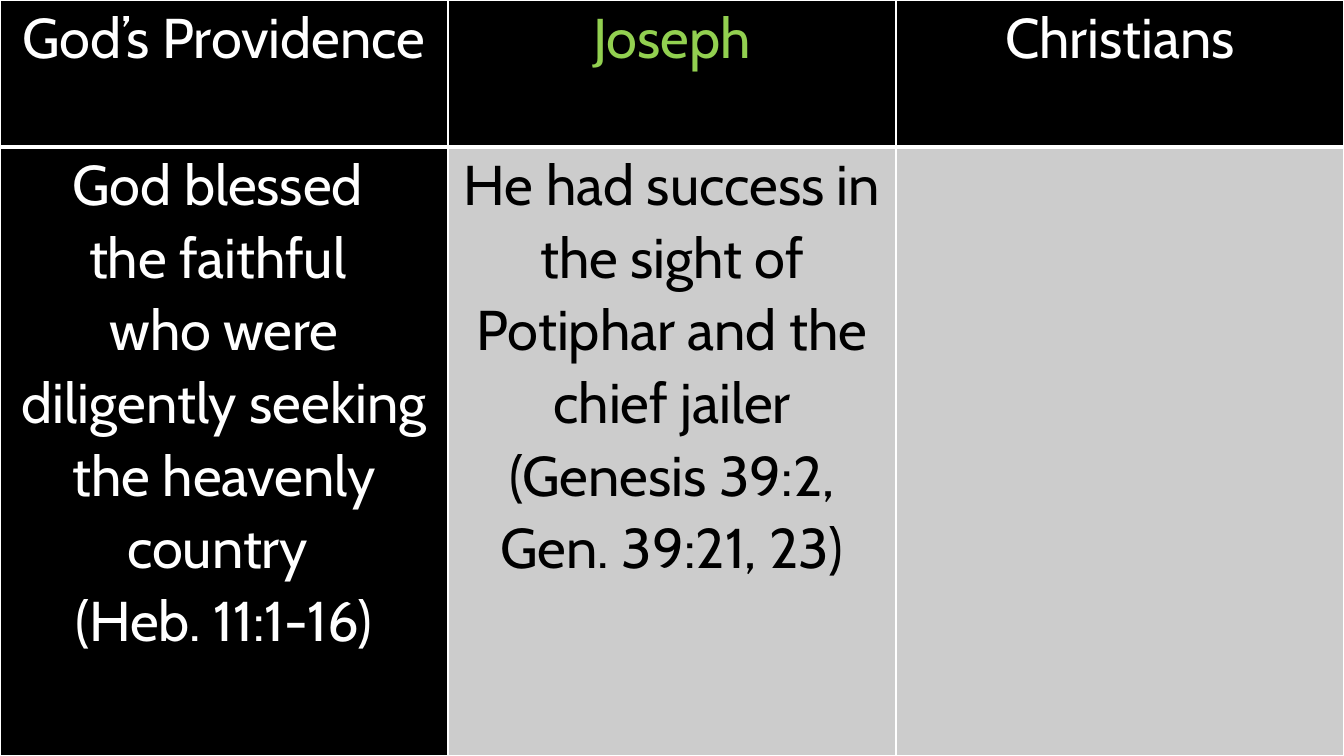
from dataclasses import dataclass

from lxml import etree
from pptx import Presentation
from pptx.dml.color import RGBColor
from pptx.enum import text
from pptx.oxml import ns
from pptx.util import Inches, Pt


@dataclass(frozen=True)
class Theme:
    font: str = "Cabin"
    size: int = 40
    line_spacing: float = 1.07
    black: str = "000000"
    white: str = "FFFFFF"
    green: str = "92D050"
    grey: str = "CCCCCC"
    thin: int = 1
    thick: int = 3


THEME = Theme()
HEADER_HEIGHT = 1.46

# Each cell: text, text colour, fill colour
ROWS = [
    [
        ("God’s Providence", THEME.white, THEME.black),
        ("Joseph", THEME.green, THEME.black),
        ("Christians", THEME.white, THEME.black),
    ],
    [
        (
            "God blessed \nthe faithful \n"
            "who were diligently seeking the heavenly\n"
            "country \n(Heb. 11:1-16)",
            THEME.white,
            THEME.black,
        ),
        (
            "He had success in the sight of Potiphar and the chief jailer "
            "(Genesis 39:2, Gen. 39:21, 23)",
            THEME.black,
            THEME.grey,
        ),
        ("", THEME.black, THEME.grey),
    ],
]


def set_borders(cell, widths):
    """Draw white cell borders; widths maps side letters L, R, T, B to points."""
    properties = cell._tc.get_or_add_tcPr()
    for side, width in widths.items():
        line = etree.SubElement(properties, ns.qn(f"a:ln{side}"), w=str(Pt(width)))
        fill = etree.SubElement(line, ns.qn("a:solidFill"))
        etree.SubElement(fill, ns.qn("a:srgbClr"), val=THEME.white)


def fill_cell(cell, content, color, fill):
    cell.margin_left = cell.margin_right = Inches(0.07)
    cell.margin_top = cell.margin_bottom = 0
    cell.fill.solid()
    cell.fill.fore_color.rgb = RGBColor.from_string(fill)
    cell.text_frame.text = content
    for paragraph in cell.text_frame.paragraphs:
        paragraph.alignment = text.PP_ALIGN.CENTER
        paragraph.line_spacing = THEME.line_spacing
        for run in paragraph.runs:
            run.font.name = THEME.font
            run.font.size = Pt(THEME.size)
            run.font.color.rgb = RGBColor.from_string(color)


def add_comparison_table(slide, left, top, width, height):
    frame = slide.shapes.add_table(len(ROWS), len(ROWS[0]), left, top, width, height)
    table = frame.table
    table.first_row = table.horz_banding = False
    for column in table.columns:
        column.width = width // len(ROWS[0])
    table.rows[0].height = Inches(HEADER_HEIGHT)
    table.rows[1].height = height - Inches(HEADER_HEIGHT)
    for row_index, row in enumerate(ROWS):
        is_header = row_index == 0
        widths = {
            "L": THEME.thin,
            "R": THEME.thin,
            "T": THEME.thin if is_header else THEME.thick,
            "B": THEME.thick if is_header else THEME.thin,
        }
        for column_index, (content, color, fill) in enumerate(row):
            cell = table.cell(row_index, column_index)
            set_borders(cell, widths)
            fill_cell(cell, content, color, fill)


def main():
    presentation = Presentation()
    presentation.slide_width = Inches(13.33)
    presentation.slide_height = Inches(7.5)
    slide = presentation.slides.add_slide(presentation.slide_layouts[6])
    slide.background.fill.solid()
    slide.background.fill.fore_color.rgb = RGBColor.from_string(THEME.black)
    add_comparison_table(
        slide, 0, 0, presentation.slide_width, presentation.slide_height
    )
    presentation.save("out.pptx")


if __name__ == "__main__":
    main()
